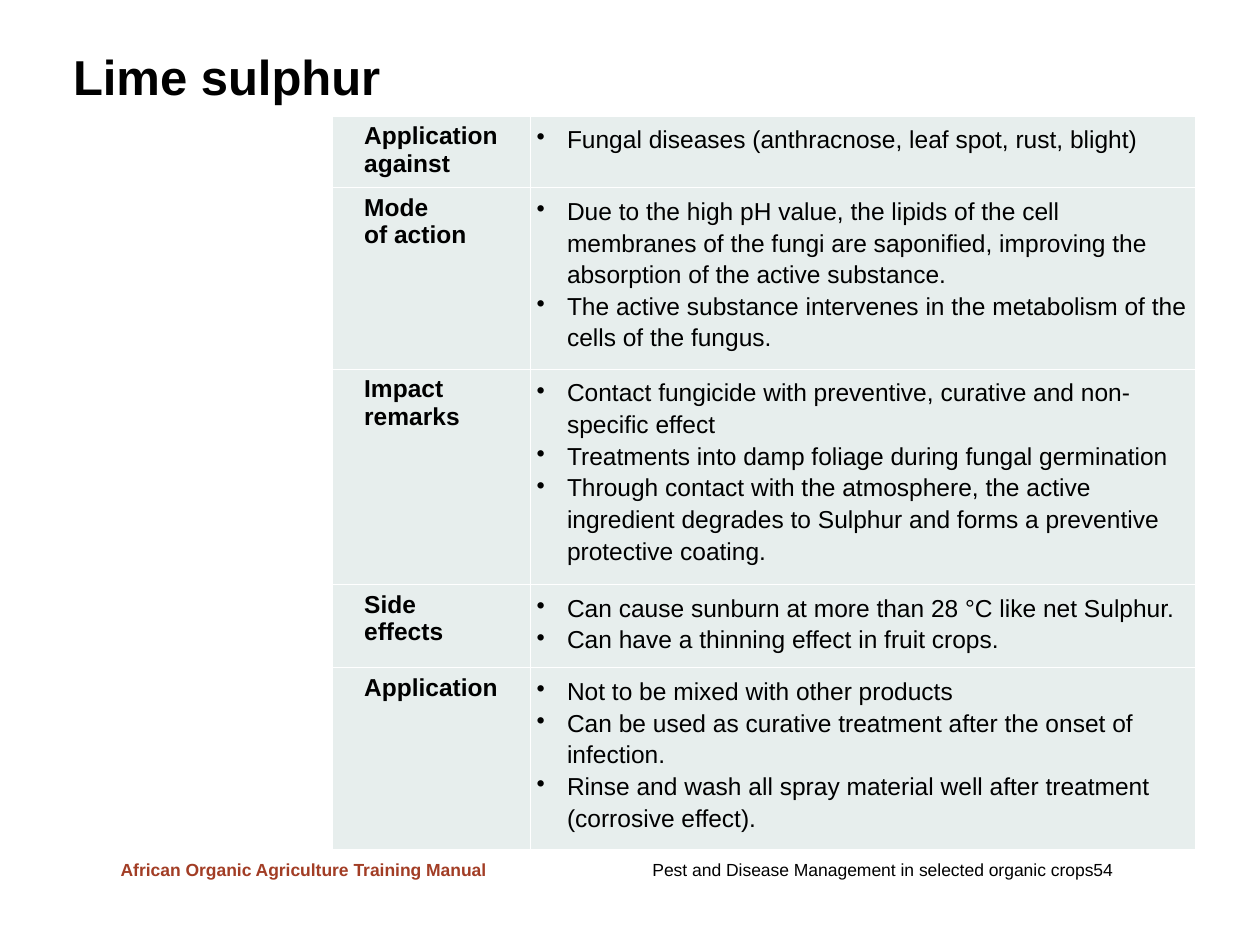
from lxml import etree
from pptx import Presentation
from pptx import util as u
from pptx.dml.color import RGBColor
from pptx.enum import text
from pptx.oxml.ns import qn

COLORS = {"ink": "000000", "brand": "A23D25", "cell": "E7EEED", "rule": "FFFFFF"}
FONT = "Arial"
TITLE = "Lime sulphur"
MANUAL = "African Organic Agriculture Training Manual"
CHAPTER = "Pest and Disease Management in selected organic crops\t54"
TOPICS = [
    ("Application against", 0.57, [
        "Fungal diseases (anthracnose, leaf spot, rust, blight)"]),
    ("Mode \nof action", 1.36, [
        "Due to the high pH value, the lipids of the cell membranes of the fungi "
        "are saponified, improving the absorption of the active substance.",
        "The active substance intervenes in the metabolism of the cells of the fungus."]),
    ("Impact remarks", 1.6, [
        "Contact fungicide with preventive, curative and non-specific effect",
        "Treatments into damp foliage during fungal germination",
        "Through contact with the atmosphere, the active ingredient degrades to "
        "Sulphur and forms a preventive protective coating."]),
    ("Side effects", 0.66, [
        "Can cause sunburn at more than 28 °C like net Sulphur.",
        "Can have a thinning effect in fruit crops."]),
    ("Application", 1.35, [
        "Not to be mixed with other products",
        "Can be used as curative treatment after the onset of infection.",
        "Rinse and wash all spray material well after treatment (corrosive effect)."]),
]
COLUMNS = (1.57, 5.28)
TABLE_LEFT, TABLE_TOP = 2.64, 0.92
INSET, LABEL_RIGHT, LABEL_INDENT, BULLET_INDENT = 0.05, 0.24, 0.2, 0.24
FOOTER_TOP, FOOTER_HEIGHT, PAGE_TAB = 6.77, 0.27, 4.11


def child(parent, tag, **attributes):
    return etree.SubElement(parent, qn(tag), {k: str(v) for k, v in attributes.items()})


def write(paragraph, wording, size, color="ink", bold=False):
    for number, line in enumerate(wording.split("\n")):
        if number:
            paragraph.add_line_break()
        run = paragraph.add_run()
        run.text = line
        run.font.name = FONT
        run.font.size = u.Pt(size)
        run.font.bold = bold
        run.font.color.rgb = RGBColor.from_string(COLORS[color])


def indent(paragraph, left, first=0):
    properties = paragraph._p.get_or_add_pPr()
    properties.set("marL", str(u.Inches(left)))
    properties.set("indent", str(u.Inches(first)))
    return properties


def add_tab(properties, position):
    child(child(properties, "a:tabLst"), "a:tab", pos=u.Inches(position), algn="l")


def add_text(slide, left, top, width, height, wrap=True):
    frame = slide.shapes.add_textbox(*map(u.Inches, (left, top, width, height))).text_frame
    frame.word_wrap = wrap
    return frame


def style_cell(cell, right):
    cell.margin_left = cell.margin_top = cell.margin_bottom = u.Inches(INSET)
    cell.margin_right = u.Inches(right)
    properties = cell._tc.get_or_add_tcPr()
    for side in ("a:lnL", "a:lnR", "a:lnT", "a:lnB"):
        fill = child(child(properties, side, w=u.Pt(1)), "a:solidFill")
        child(fill, "a:srgbClr", val=COLORS["rule"])
    cell.fill.solid()
    cell.fill.fore_color.rgb = RGBColor.from_string(COLORS["cell"])


def add_topics(slide):
    height = sum(row_height for _, row_height, _ in TOPICS)
    table = slide.shapes.add_table(
        len(TOPICS), len(COLUMNS),
        *map(u.Inches, (TABLE_LEFT, TABLE_TOP, sum(COLUMNS), height))).table
    table.first_row = table.horz_banding = False
    for column, width in zip(table.columns, COLUMNS):
        column.width = u.Inches(width)
    for row, (label, row_height, points) in zip(table.rows, TOPICS):
        row.height = u.Inches(row_height)
        label_cell, points_cell = row.cells
        style_cell(label_cell, LABEL_RIGHT)
        style_cell(points_cell, INSET)
        heading = label_cell.text_frame.paragraphs[0]
        add_tab(indent(heading, LABEL_INDENT), LABEL_INDENT)
        heading.space_after = u.Pt(3)
        write(heading, label, 14, bold=True)
        frame = points_cell.text_frame
        for number, point in enumerate(points):
            paragraph = frame.add_paragraph() if number else frame.paragraphs[0]
            child(indent(paragraph, BULLET_INDENT, -BULLET_INDENT), "a:buChar", char="•")
            paragraph.line_spacing = 1.15
            write(paragraph, point, 14)


def main():
    deck = Presentation()
    deck.slide_width, deck.slide_height = u.Inches(10), u.Inches(7.5)
    slide = deck.slides.add_slide(deck.slide_layouts[6])

    chapter = add_text(slide, 5.08, FOOTER_TOP, 4.84, FOOTER_HEIGHT)
    chapter.vertical_anchor = text.MSO_ANCHOR.MIDDLE
    add_tab(indent(chapter.paragraphs[0], 0), PAGE_TAB)
    write(chapter.paragraphs[0], CHAPTER, 10)

    manual = add_text(slide, 0.86, FOOTER_TOP, 3.14, FOOTER_HEIGHT, wrap=False)
    write(manual.paragraphs[0], MANUAL, 10, "brand", True)

    title = add_text(slide, 0.58, 0.25, 9.02, 0.76)
    title.vertical_anchor = text.MSO_ANCHOR.MIDDLE
    title.margin_left = title.margin_top = 0
    write(title.paragraphs[0], TITLE, 28, bold=True)

    add_topics(slide)
    deck.save("out.pptx")


if __name__ == "__main__":
    main()
